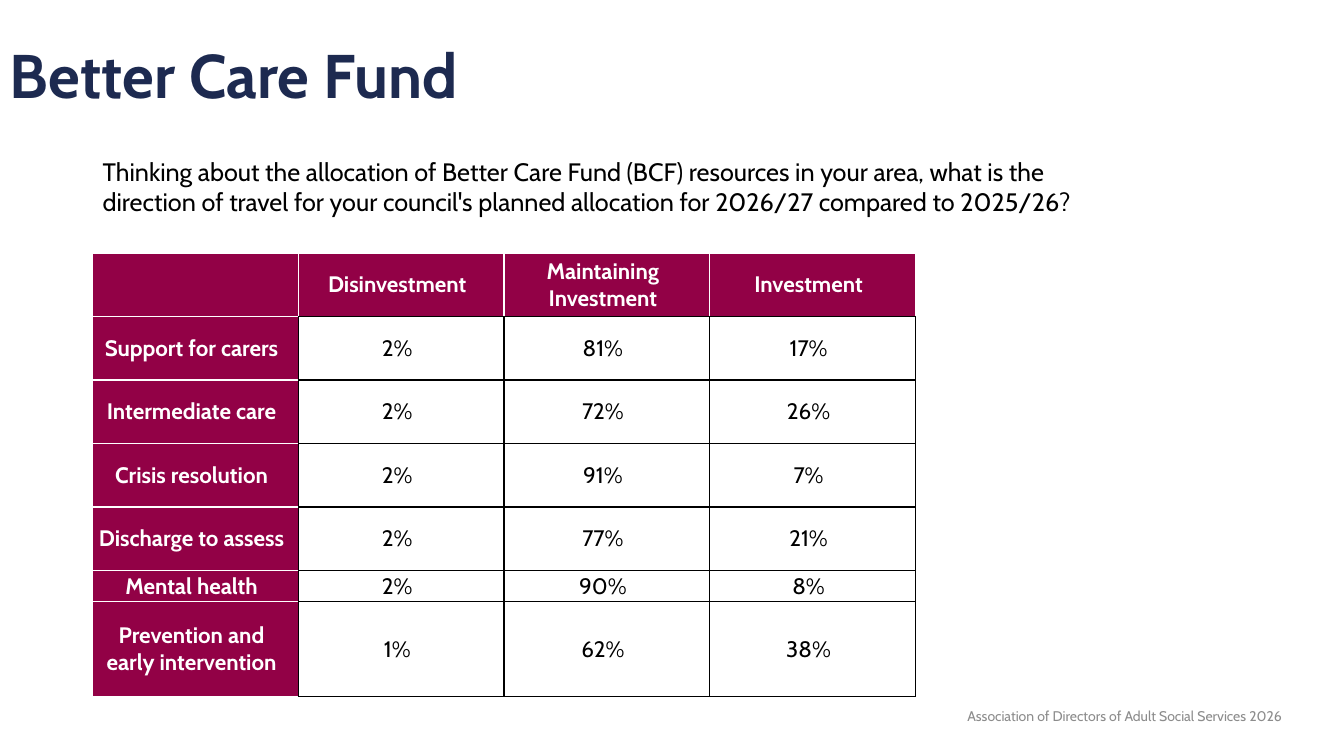
from dataclasses import dataclass

from lxml import etree
from pptx import Presentation
from pptx.dml.color import RGBColor
from pptx.enum.text import MSO_ANCHOR, PP_ALIGN
from pptx.oxml.ns import qn
from pptx.util import Inches, Pt

LEFT, CENTER, RIGHT = PP_ALIGN.LEFT, PP_ALIGN.CENTER, PP_ALIGN.RIGHT
TOP, MIDDLE = MSO_ANCHOR.TOP, MSO_ANCHOR.MIDDLE

COLUMN_WIDTH = 2.04
ROW_HEIGHTS = [0.63] * 5 + [0.31, 0.94]
ALLOCATIONS = [
    ["", "Disinvestment", "Maintaining Investment", "Investment"],
    ["Support for carers", "2%", "81%", "17%"],
    ["Intermediate care", "2%", "72%", "26%"],
    ["Crisis resolution", "2%", "91%", "7%"],
    ["Discharge to assess", "2%", "77%", "21%"],
    ["Mental health", "2%", "90%", "8%"],
    ["Prevention and early intervention", "1%", "62%", "38%"],
]


@dataclass(frozen=True)
class Theme:
    font: str = "Cabin"
    navy: str = "1D2A50"
    maroon: str = "920146"
    grey: str = "8C8C8C"
    black: str = "000000"
    white: str = "FFFFFF"
    title_size: int = 44
    question_size: int = 18
    table_size: int = 16
    footer_size: int = 10
    border_width: int = 1


class SlideBuilder:
    def __init__(self, slide, theme):
        self.slide = slide
        self.theme = theme

    def add_run(self, paragraph, text, size, color, bold=False):
        run = paragraph.add_run()
        run.text = text
        run.font.name = self.theme.font
        run.font.size = Pt(size)
        run.font.bold = bold
        run.font.color.rgb = RGBColor.from_string(color)

    def add_text(self, text, left, top, width, height, size, color,
                 bold=False, align=LEFT, anchor=MIDDLE, line_spacing=1.0):
        box = self.slide.shapes.add_textbox(
            Inches(left), Inches(top), Inches(width), Inches(height))
        frame = box.text_frame
        frame.word_wrap = True
        frame.vertical_anchor = anchor
        paragraph = frame.paragraphs[0]
        paragraph.alignment = align
        paragraph.line_spacing = line_spacing
        self.add_run(paragraph, text, size, color, bold)

    def set_borders(self, cell, **colors):
        """Draw the cell's edges; keywords L, R, T and B give their colours."""
        properties = cell._tc.get_or_add_tcPr()
        for side in "LRTB":
            line = etree.SubElement(properties, qn(f"a:ln{side}"),
                                    w=str(Pt(self.theme.border_width)))
            fill = etree.SubElement(line, qn("a:solidFill"))
            etree.SubElement(fill, qn("a:srgbClr"), val=colors[side])

    def style_cell(self, cell, text, is_header, is_label):
        """Fill one cell; headings are maroon and edged black where they meet values."""
        theme = self.theme
        is_heading = is_header or is_label
        edge = theme.white if is_heading else theme.black
        borders = dict.fromkeys("LRTB", edge)
        if is_header and not is_label:
            borders["B"] = theme.black
        if is_label and not is_header:
            borders["R"] = theme.black
        self.set_borders(cell, **borders)
        cell.fill.solid()
        cell.fill.fore_color.rgb = RGBColor.from_string(
            theme.maroon if is_heading else theme.white)
        cell.vertical_anchor = MIDDLE
        cell.margin_left = cell.margin_top = cell.margin_bottom = Inches(0)
        cell.margin_right = Inches(0.08)
        if text:
            paragraph = cell.text_frame.paragraphs[0]
            paragraph.alignment = CENTER
            self.add_run(paragraph, text, theme.table_size,
                         theme.white if is_heading else theme.black, is_heading)

    def add_table(self, rows, left, top, column_width, row_heights):
        column_count = len(rows[0])
        table = self.slide.shapes.add_table(
            len(rows), column_count, Inches(left), Inches(top),
            Inches(column_width * column_count), Inches(sum(row_heights))).table
        for column in table.columns:
            column.width = Inches(column_width)
        for row_index, (texts, height) in enumerate(zip(rows, row_heights)):
            table.rows[row_index].height = Inches(height)
            for column_index, text in enumerate(texts):
                self.style_cell(table.cell(row_index, column_index), text,
                                row_index == 0, column_index == 0)


def main():
    presentation = Presentation()
    presentation.slide_width = Inches(13.33)
    presentation.slide_height = Inches(7.5)
    theme = Theme()
    slide = presentation.slides.add_slide(presentation.slide_layouts[6])
    builder = SlideBuilder(slide, theme)

    builder.add_text("Better Care Fund", 0, 0.05, 11.5, 1.45,
                     theme.title_size, theme.navy, bold=True, line_spacing=0.9)
    builder.add_text("Association of Directors of Adult Social Services 2026",
                     8.31, 6.9, 4.5, 0.4, theme.footer_size, theme.grey, align=RIGHT)
    builder.add_table(ALLOCATIONS, 0.92, 2.51, COLUMN_WIDTH, ROW_HEIGHTS)
    builder.add_text(
        "Thinking about the allocation of Better Care Fund (BCF) resources in your area, "
        "what is the direction of travel for your council's planned allocation for "
        "2026/27 compared to 2025/26?",
        0.92, 1.5, 10.05, 1.01, theme.question_size, theme.black, anchor=TOP)

    presentation.save("out.pptx")


if __name__ == "__main__":
    main()
